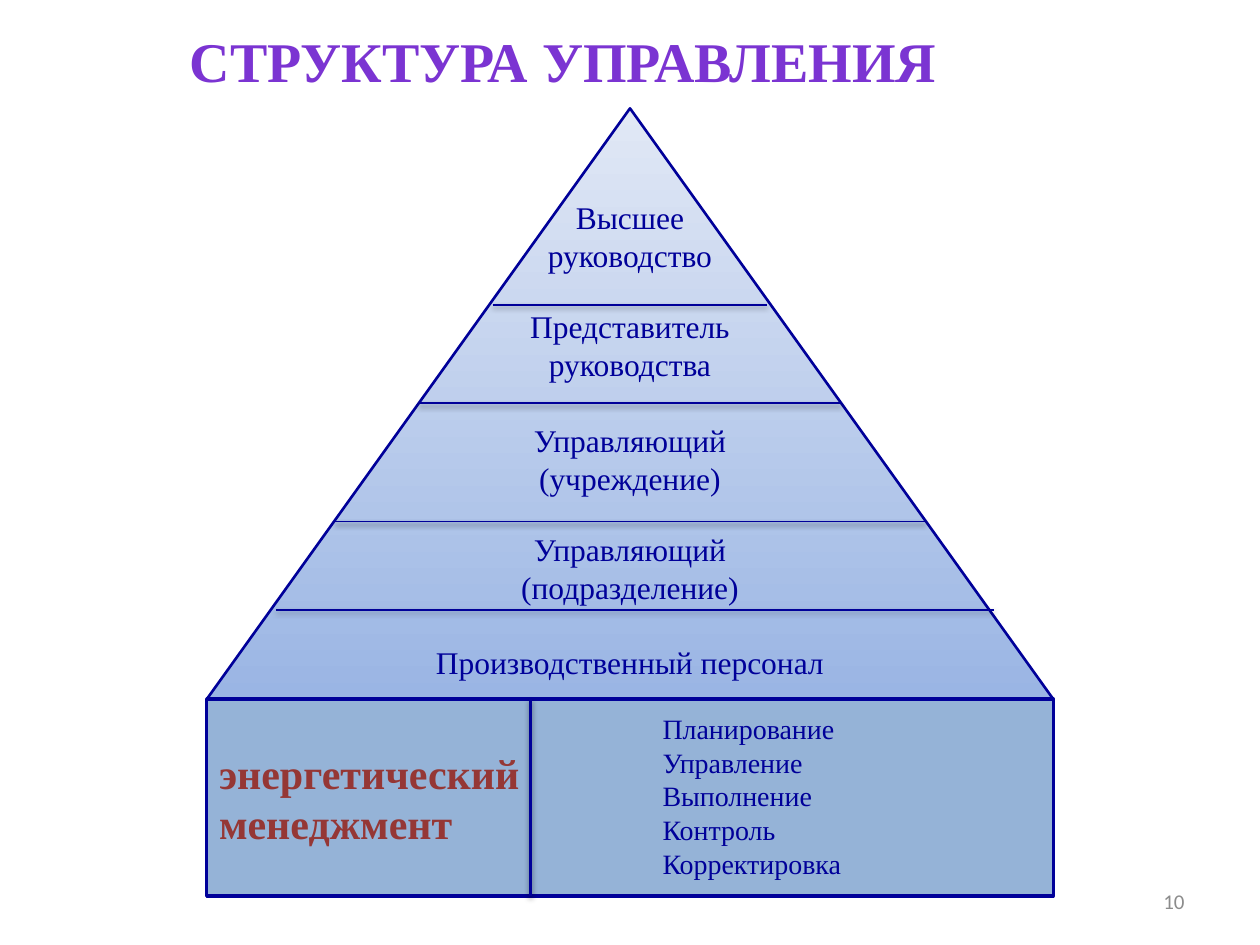
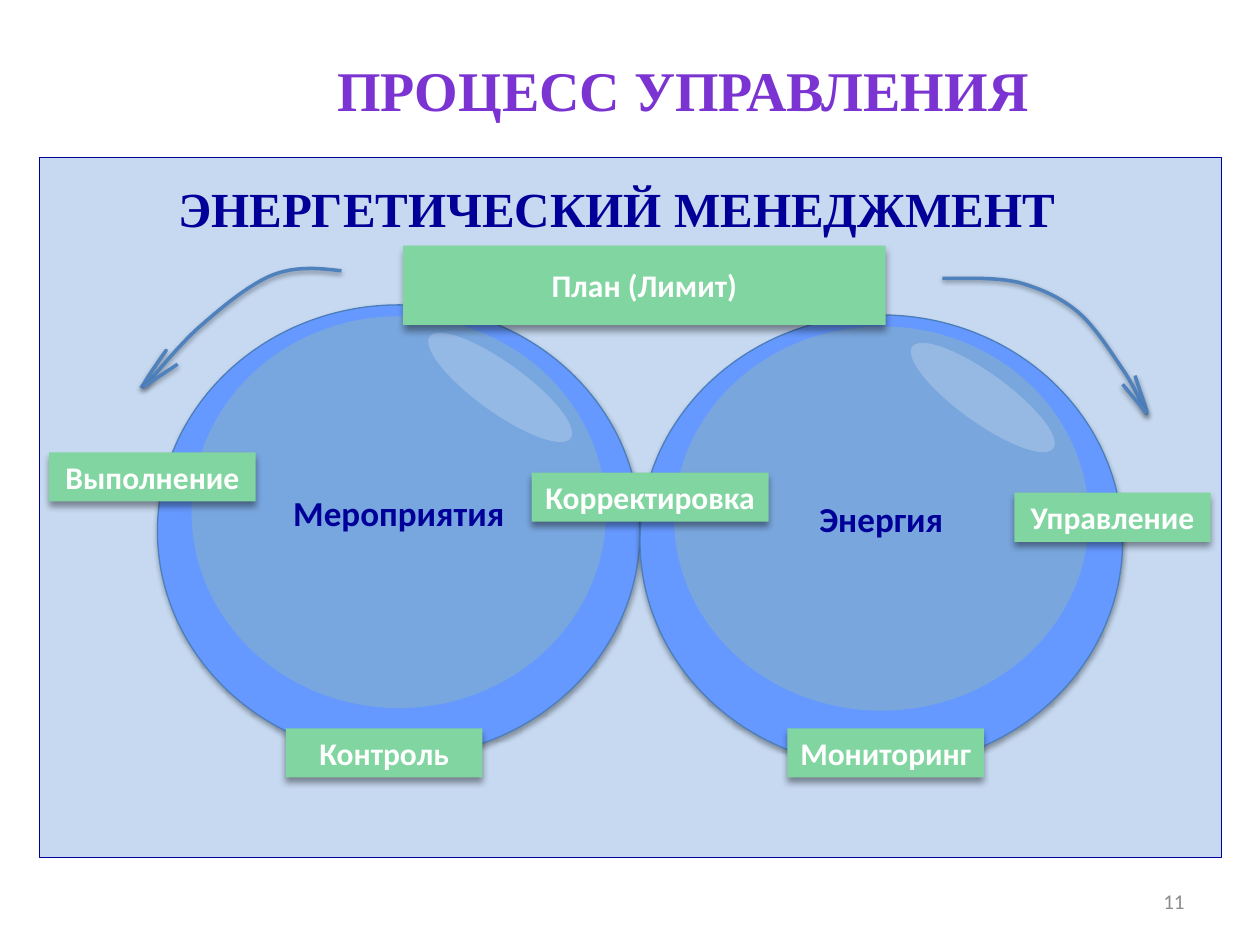
from lxml import etree
from pptx import Presentation
from pptx.dml.color import RGBColor
from pptx.enum.shapes import MSO_CONNECTOR, MSO_SHAPE
from pptx.enum.text import MSO_ANCHOR, PP_ALIGN
from pptx.oxml.ns import qn
from pptx.util import Emu, Inches, Pt

RECT, OVAL = MSO_SHAPE.RECTANGLE, MSO_SHAPE.OVAL
TRIANGLE = MSO_SHAPE.ISOSCELES_TRIANGLE
STRAIGHT = MSO_CONNECTOR.STRAIGHT
TOP, MIDDLE = MSO_ANCHOR.TOP, MSO_ANCHOR.MIDDLE
LEFT, CENTER, RIGHT = PP_ALIGN.LEFT, PP_ALIGN.CENTER, PP_ALIGN.RIGHT

SERIF, SANS = "Times New Roman", "Calibri"
NAVY, PURPLE, BROWN, GRAY, WHITE = "000099", "7B34D2", "953735", "8C8C8C", "FFFFFF"
BASE_BLUE, PANEL_BLUE, GREEN = "95B3D7", "C6D9F1", "81D5A1"
RIM_BLUE, RIM_LINE, ARROW_BLUE = "6699FF", "4B7EBC", "4F81BD"

LINE_SHADOW = (38, 3.1, 1.6)
GLOBE_SHADOW = (35, 3.1, 1.8)
TAG_SHADOW = (40, 4, 3)

LEVELS = [
    (1.87, ["Высшее", "руководство"]),
    (2.74, ["Представитель", "руководства"]),
    (3.64, ["Управляющий", "(учреждение)"]),
    (4.51, ["Управляющий", "(подразделение)"]),
    (5.25, ["Производственный персонал"]),
]
LEVEL_LINES = [(3.91, 6.09, 2.42), (3.32, 6.68, 3.2), (2.66, 7.34, 4.14), (2.19, 7.89, 4.84)]
FUNCTIONS = ["Планирование", "Управление", "Выполнение", "Контроль", "Корректировка"]

TAGS = [
    ("План (Лимит)", 3.2, 1.95, 3.83, 0.63),
    ("Корректировка", 4.22, 3.75, 1.88, 0.39),
    ("Выполнение", 0.39, 3.59, 1.64, 0.39),
    ("Контроль", 2.27, 5.78, 1.56, 0.39),
    ("Мониторинг", 6.25, 5.78, 1.56, 0.39),
    ("Управление", 8.05, 3.91, 1.56, 0.39),
]
RIGHT_ARROW = [
    (7.48, 2.21), (7.69, 2.21), (7.9, 2.2), (8.08, 2.24), (8.26, 2.29), (8.42, 2.36),
    (8.56, 2.48), (8.7, 2.6), (8.84, 2.83), (8.93, 2.96), (9.02, 3.1), (9.09, 3.27),
    (9.1, 3.28), (9.12, 3.28), (9.01, 3.01), (9.01, 2.98),
]
LEFT_ARROW = [
    (2.71, 2.15), (2.54, 2.13), (2.36, 2.11), (2.17, 2.18), (1.99, 2.25), (1.77, 2.43),
    (1.6, 2.58), (1.43, 2.72), (1.19, 3.03), (1.14, 3.07), (1.09, 3.1), (1.32, 2.78),
    (1.32, 2.78), (1.31, 2.79), (1.15, 3.03), (1.12, 3.08),
]


def rgb(color):
    return RGBColor.from_string(color)


def set_effects(shape, shadow=None):
    effects = etree.SubElement(shape._element.spPr, qn("a:effectLst"))
    if shadow:
        alpha, blur, dist = shadow
        outer = etree.SubElement(effects, qn("a:outerShdw"), blurRad=str(Pt(blur)),
                                 dist=str(Pt(dist)), dir="5400000", rotWithShape="0")
        clr = etree.SubElement(outer, qn("a:srgbClr"), val="000000")
        etree.SubElement(clr, qn("a:alpha"), val=str(alpha * 1000))


def set_line(shape, color, width):
    shape.line.color.rgb = rgb(color)
    shape.line.width = Pt(width)


def write(shape, lines, size, color, font=SERIF, bold=False, align=LEFT, anchor=TOP):
    tf = shape.text_frame
    tf.word_wrap = True
    tf.vertical_anchor = anchor
    for i, line in enumerate(lines):
        p = tf.paragraphs[0] if i == 0 else tf.add_paragraph()
        p.text = line
        p.alignment = align
        p.font.name, p.font.size, p.font.bold = font, Pt(size), bold
        p.font.color.rgb = rgb(color)


def add_text(s, x, y, w, h, lines, size, color, **style):
    box = s.shapes.add_textbox(Inches(x), Inches(y), Inches(w), Inches(h))
    write(box, lines, size, color, **style)


def add_box(parent, kind, x, y, w, h, fill, line=None, width=1, shadow=None):
    sp = parent.shapes.add_shape(kind, Inches(x), Inches(y), Inches(w), Inches(h))
    if isinstance(fill, tuple):
        sp.fill.gradient()
        sp.fill.gradient_angle = 90
        for stop, color in zip(sp.fill.gradient_stops, fill):
            stop.color.rgb = rgb(color)
        sp.fill.gradient_stops[0].position = 0
        sp.fill.gradient_stops[1].position = 1
    else:
        sp.fill.solid()
        sp.fill.fore_color.rgb = rgb(fill)
    if line:
        set_line(sp, line, width)
    else:
        sp.line.fill.background()
    set_effects(sp, shadow)
    return sp


def add_line(s, x1, y1, x2, y2, color=NAVY, width=1):
    cn = s.shapes.add_connector(STRAIGHT, Inches(x1), Inches(y1), Inches(x2), Inches(y2))
    set_line(cn, color, width)
    set_effects(cn, LINE_SHADOW)


def bezier(a, b, c, d, t):
    u = 1 - t
    return tuple(Inches(u**3 * i + 3 * u * u * t * j + 3 * u * t * t * k + t**3 * m)
                 for i, j, k, m in zip(a, b, c, d))


def add_curve(s, points, steps=12):
    fb = s.shapes.build_freeform(*(Inches(v) for v in points[0]))
    fb.add_line_segments([bezier(*points[i:i + 4], n / steps)
                          for i in range(0, len(points) - 1, 3)
                          for n in range(1, steps + 1)], close=False)
    sp = fb.convert_to_shape(Emu(0), Emu(0))
    sp.fill.background()
    set_line(sp, ARROW_BLUE, 2)
    set_effects(sp, LINE_SHADOW)


def add_globe(s, x, y, label, core_height, core_color):
    group = s.shapes.add_group_shape()
    add_box(group, OVAL, x, y, 3.83, 3.59, RIM_BLUE, RIM_LINE, 0.75, GLOBE_SHADOW)
    core = add_box(group, OVAL, x + 0.27, y + 0.09, 3.29, core_height, core_color)
    write(core, [label], 20, NAVY, font=SANS, bold=True, align=CENTER, anchor=MIDDLE)
    glare = add_box(group, OVAL, x + 2.03, y + 0.46, 1.38, 0.39, WHITE)
    glare.rotation = 35.8
    clr = glare._element.spPr.find(qn("a:solidFill"))[0]
    etree.SubElement(clr, qn("a:alpha"), val="22000")


def add_slide(prs, number, title, x, y, w):
    s = prs.slides.add_slide(prs.slide_layouts[6])
    add_text(s, 7.17, 6.95, 2.33, 0.4, [str(number)], 12, GRAY,
             font=SANS, align=RIGHT, anchor=MIDDLE)
    add_text(s, x, y, w, 0.64, [title], 32, PURPLE, bold=True)
    return s


def build_structure(prs):
    s = add_slide(prs, 10, "СТРУКТУРА УПРАВЛЕНИЯ", 1.41, 0.16, 6.3)
    add_box(s, TRIANGLE, 1.64, 0.86, 6.72, 4.69, ("9AB5E4", "E1E8F5"), NAVY, 1.5)
    for x1, x2, y in LEVEL_LINES:
        add_line(s, x1, y, x2, y)
    for middle, lines in LEVELS:
        add_text(s, 3, middle - 0.35, 4, 0.7, lines, 18, NAVY, align=CENTER, anchor=MIDDLE)
    base = add_box(s, RECT, 1.64, 5.55, 6.72, 1.56, BASE_BLUE, NAVY, 2)
    write(base, ["энергетический", "менеджмент"], 24, BROWN, bold=True, anchor=MIDDLE)
    add_line(s, 4.21, 5.55, 4.21, 7.11, width=2)
    add_text(s, 5.16, 5.6, 3.05, 1.45, FUNCTIONS, 16, NAVY)


def build_process(prs):
    s = add_slide(prs, 11, "ПРОЦЕСС УПРАВЛЕНИЯ", 2.58, 0.39, 5.74)
    add_box(s, RECT, 0.31, 1.25, 9.38, 5.55, PANEL_BLUE, NAVY, 0.25)
    add_globe(s, 1.25, 2.42, "Мероприятия", 3.11, "78A6DE")
    add_globe(s, 5.08, 2.5, "Энергия", 3.05, "79A6DD")
    for label, x, y, w, h in TAGS:
        tag = add_box(s, RECT, x, y, w, h, GREEN, shadow=TAG_SHADOW)
        write(tag, [label], 18, WHITE, font=SANS, bold=True, align=CENTER, anchor=MIDDLE)
    add_curve(s, RIGHT_ARROW)
    add_line(s, 9.1, 3.28, 8.91, 3.05, ARROW_BLUE, 2)
    add_curve(s, LEFT_ARROW)
    add_line(s, 1.14, 3.07, 1.41, 2.89, ARROW_BLUE, 2)
    add_text(s, 0.45, 1.37, 8.89, 0.57, ["ЭНЕРГЕТИЧЕСКИЙ МЕНЕДЖМЕНТ"], 28, NAVY,
             bold=True, align=CENTER)


def main():
    prs = Presentation()
    prs.slide_width, prs.slide_height = Inches(10), Inches(7.5)
    build_structure(prs)
    build_process(prs)
    prs.save("out.pptx")


if __name__ == "__main__":
    main()
